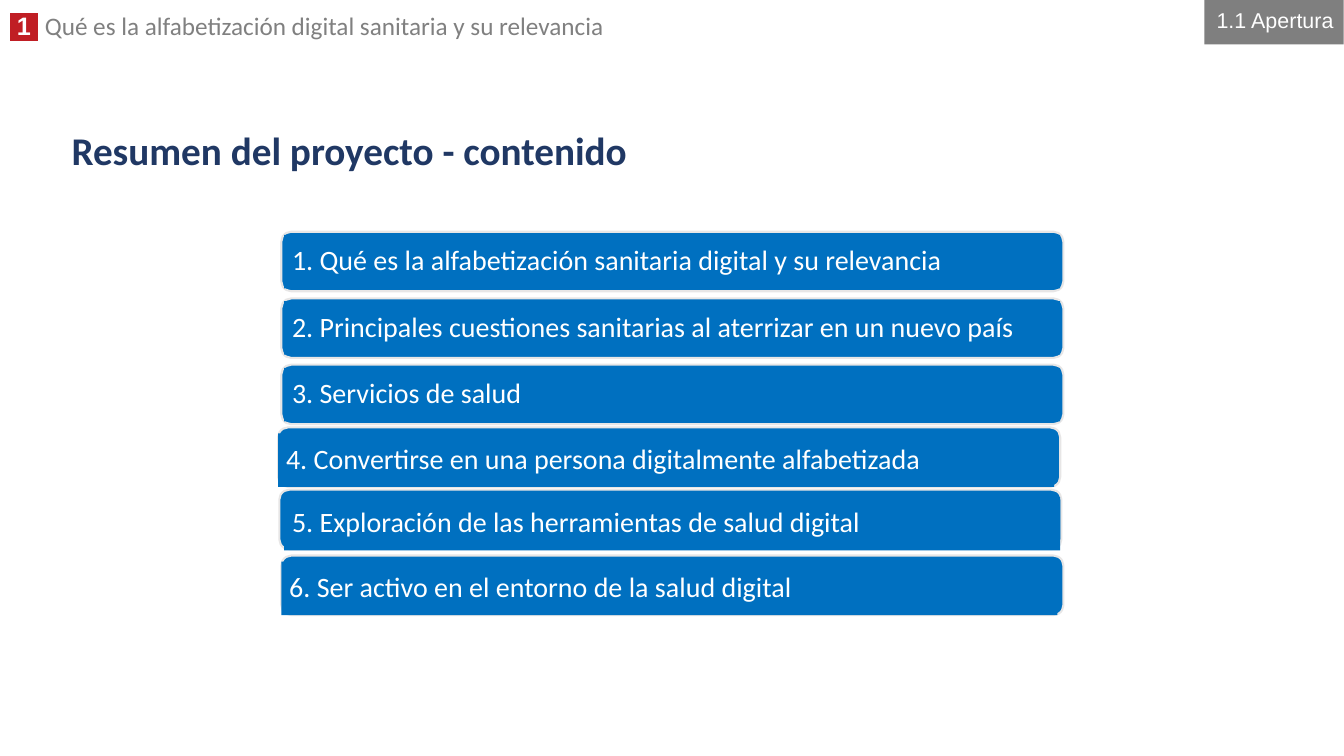
from lxml.etree import SubElement
from pptx import Presentation
from pptx.dml.color import RGBColor
from pptx.enum.shapes import MSO_SHAPE as Shape
from pptx.enum.text import MSO_ANCHOR as Anchor, MSO_AUTO_SIZE as AutoSize, PP_ALIGN as Align
from pptx.oxml.ns import qn
from pptx.util import Cm, Pt

WHITE = RGBColor(0xFF, 0xFF, 0xFF)
BLUE = RGBColor(0x00, 0x70, 0xC0)
NAVY = RGBColor(0x20, 0x38, 0x64)
RED = RGBColor(0xC0, 0x1E, 0x24)
GRAY = RGBColor(0x7F, 0x7F, 0x7F)
HEADER_GRAY = RGBColor(0x80, 0x80, 0x80)
PALE_GRAY = RGBColor(0xE7, 0xE6, 0xE6)

BAR_WIDTH, BAR_HEIGHT = 19.71, 1.5
LABEL_WIDTH, LABEL_HEIGHT = 19.56, 1.35

CHAPTERS = [
    ("1. Qué es la alfabetización sanitaria digital y su relevancia", (7.09, 5.84), (7.16, 5.92)),
    ("2. Principales cuestiones sanitarias al aterrizar en un nuevo país", (7.09, 7.52), (7.16, 7.59)),
    ("3. Servicios de salud", (7.09, 9.19), (7.16, 9.27)),
    ("4. Convertirse en una persona digitalmente alfabetizada", (7.01, 10.77), (7.01, 10.92)),
    ("5. Exploración de las herramientas de salud digital", (7.04, 12.34), (7.16, 12.52)),
    ("6. Ser activo en el entorno de la salud digital", (7.09, 14), (7.09, 14.15)),
]


def style_font(font, name, size, color, bold=False):
    font.size = Pt(size)
    font.bold = bold
    font.color.rgb = color
    font.name = name


def add_block(shapes, kind, box, fill, outline=None):
    block = shapes.add_shape(kind, *map(Cm, box))
    block.shadow.inherit = False
    block.fill.solid()
    block.fill.fore_color.rgb = fill
    if outline is None:
        block.line.fill.background()
    else:
        block.line.color.rgb = outline
        block.line.width = Pt(1.5)
    return block


def write_line(block, text, align, spacing, font_style):
    frame = block.text_frame
    frame.word_wrap = True
    frame.vertical_anchor = Anchor.MIDDLE
    frame.text = text
    line = frame.paragraphs[0]
    line.alignment = align
    line.line_spacing = spacing
    style_font(line.font, *font_style)
    return frame


def add_chapter(slide, text, bar_corner, label_corner):
    chapter = slide.shapes.add_group_shape()
    add_block(chapter.shapes, Shape.ROUNDED_RECTANGLE, (*bar_corner, BAR_WIDTH, BAR_HEIGHT), BLUE, PALE_GRAY)
    label = add_block(chapter.shapes, Shape.RECTANGLE, (*label_corner, LABEL_WIDTH, LABEL_HEIGHT), BLUE)
    frame = write_line(label, text, Align.LEFT, 0.9, ("Calibri", 20, WHITE))
    frame.margin_left = frame.margin_right = Cm(0.2)
    frame.margin_top = frame.margin_bottom = Cm(0.2)


def highlight(run, color):
    properties = run.font._element
    marker = SubElement(properties, qn("a:highlight"))
    SubElement(marker, qn("a:srgbClr")).set("val", str(color))
    properties.find(qn("a:solidFill")).addnext(marker)


def add_header(slide):
    header = slide.shapes.add_textbox(Cm(0), Cm(0.28), Cm(24.18), Cm(0.86))
    header.text_frame.word_wrap = True
    line = header.text_frame.paragraphs[0]
    line.line_spacing = 0.8
    number, gap, unit = (line.add_run() for _ in range(3))
    number.text = " 1 "
    gap.text = " "
    unit.text = "Qué es la alfabetización digital sanitaria y su relevancia"
    style_font(number.font, "Arial", 18, WHITE, True)
    style_font(gap.font, "Arial", 18, GRAY)
    style_font(unit.font, "Calibri", 18, HEADER_GRAY)
    highlight(number, RED)


def set_title(slide, text):
    title = slide.shapes.title
    title.left, title.top, title.width, title.height = map(Cm, (1.55, 3, 30.73, 1.68))
    frame = write_line(title, text, Align.LEFT, 0.9, ("Calibri", 28, NAVY, True))
    frame.auto_size = AutoSize.NONE


def add_section_tag(slide, text):
    tag = add_block(slide.shapes, Shape.RECTANGLE, (30.35, 0, 3.51, 1.12), GRAY)
    write_line(tag, text, Align.RIGHT, 0.8, ("Arial", 15.3, WHITE))


def main():
    deck = Presentation()
    deck.slide_width, deck.slide_height = Cm(33.87), Cm(19.05)
    slide = deck.slides.add_slide(deck.slide_layouts[5])
    add_header(slide)
    for chapter in CHAPTERS:
        add_chapter(slide, *chapter)
    set_title(slide, "Resumen del proyecto - contenido")
    add_section_tag(slide, "1.1 Apertura")
    deck.save("out.pptx")


if __name__ == "__main__":
    main()
